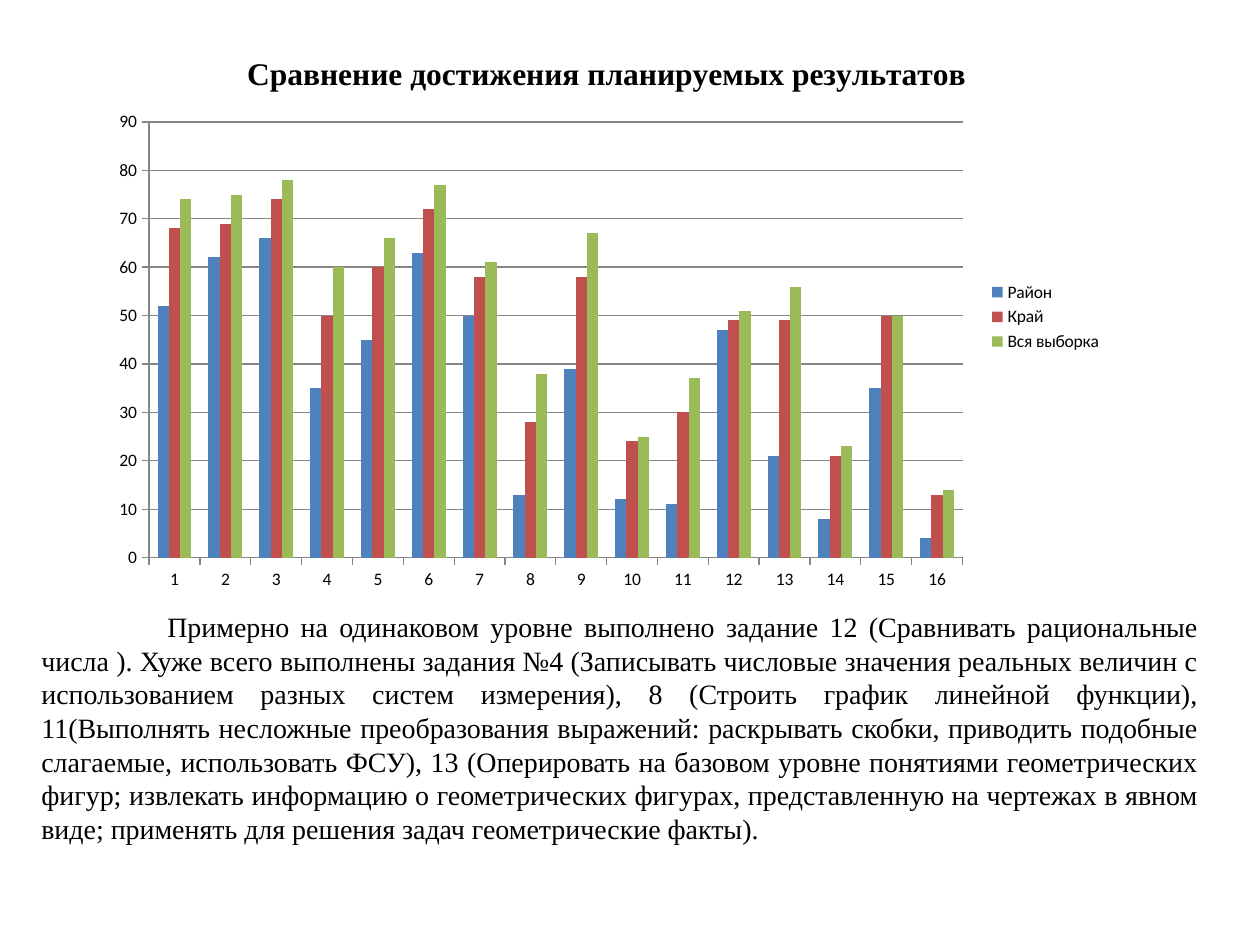
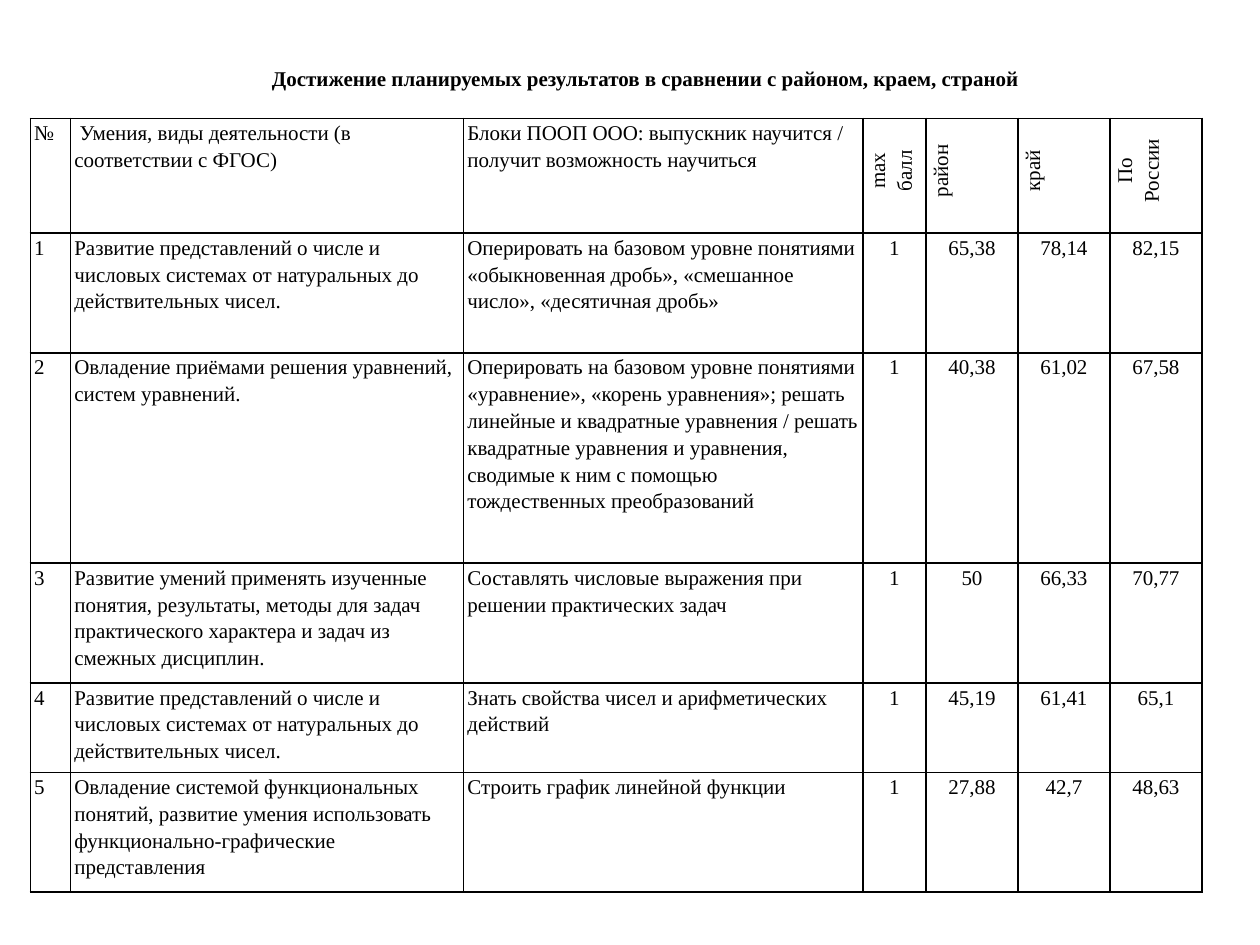
from lxml.etree import SubElement
from pptx import Presentation
from pptx.chart.data import CategoryChartData
from pptx.dml.color import RGBColor
from pptx.enum.chart import XL_CHART_TYPE, XL_LEGEND_POSITION, XL_TICK_MARK
from pptx.enum.text import MSO_ANCHOR, MSO_AUTO_SIZE, PP_ALIGN
from pptx.oxml import parse_xml
from pptx.oxml.ns import nsdecls, qn
from pptx.util import Inches, Pt

BLACK = RGBColor(0x00, 0x00, 0x00)
GRAY = RGBColor(0x86, 0x86, 0x86)
BLUE = RGBColor(0x4F, 0x81, 0xBD)
RED = RGBColor(0xC0, 0x50, 0x4D)
GREEN = RGBColor(0x9B, 0xBB, 0x59)
SERIF = "Times New Roman"
SANS = "Calibri"

SERIES = [
    ("Район", BLUE, (52, 62, 66, 35, 45, 63, 50, 13, 39, 12, 11, 47, 21, 8, 35, 4)),
    ("Край", RED, (68, 69, 74, 50, 60, 72, 58, 28, 58, 24, 30, 49, 49, 21, 50, 13)),
    ("Вся выборка", GREEN, (74, 75, 78, 60, 66, 77, 61, 38, 67, 25, 37, 51, 56, 23, 50, 14)),
]
PLOT_LAYOUT = {"x": 0.05, "y": 0.16, "w": 0.8, "h": 0.76}
CONCLUSION = (
    "Примерно на одинаковом уровне выполнено задание 12 (Сравнивать рациональные числа ). "
    "Хуже всего выполнены задания №4 (Записывать числовые значения реальных величин с "
    "использованием разных систем измерения), 8 (Строить график линейной функции), "
    "11(Выполнять несложные преобразования выражений: раскрывать скобки, приводить подобные "
    "слагаемые, использовать ФСУ), 13 (Оперировать на базовом уровне понятиями геометрических "
    "фигур; извлекать информацию о геометрических фигурах, представленную на чертежах в явном "
    "виде; применять для решения задач геометрические факты)."
)
NUMBER_SYSTEMS = "Развитие представлений о числе и числовых системах от натуральных до действительных чисел."
COLUMN_WIDTHS = (0.32, 3.12, 3.17, 0.5, 0.73, 0.73, 0.73)
ROW_HEIGHTS = (0.91, 0.95, 1.67, 0.95, 0.71, 0.95)
FIRST_SCORE_COLUMN = 3
RESULTS = [
    ("№", " Умения, виды деятельности (в соответствии с ФГОС)",
     "Блоки ПООП ООО: выпускник научится / получит возможность научиться",
     "max\nбалл", "район", "край", "По\nРоссии"),
    ("1", NUMBER_SYSTEMS,
     "Оперировать на базовом уровне понятиями «обыкновенная дробь», «смешанное число», "
     "«десятичная дробь»", "1", "65,38", "78,14", "82,15"),
    ("2", "Овладение приёмами решения уравнений, систем уравнений.",
     "Оперировать на базовом уровне понятиями «уравнение», «корень уравнения»; решать линейные "
     "и квадратные уравнения / решать квадратные уравнения и уравнения, сводимые к ним с помощью "
     "тождественных преобразований", "1", "40,38", "61,02", "67,58"),
    ("3", "Развитие умений применять изученные понятия, результаты, методы для задач "
     "практического характера и задач из смежных дисциплин.",
     "Составлять числовые выражения при решении практических задач", "1", "50", "66,33", "70,77"),
    ("4", NUMBER_SYSTEMS, "Знать свойства чисел и арифметических действий",
     "1", "45,19", "61,41", "65,1"),
    ("5", "Овладение системой функциональных понятий, развитие умения использовать "
     "функционально-графические представления",
     "Строить график линейной функции", "1", "27,88", "42,7", "48,63"),
]


def set_all(target, **values):
    """Set several attributes of one object."""
    for name, value in values.items():
        setattr(target, name, value)


def format_font(font, size, name=SERIF, bold=False):
    """Give a font its face, size, weight and the text colour."""
    set_all(font, name=name, size=Pt(size), bold=bold)
    font.color.rgb = BLACK


def write(para, text, size, bold=False):
    """Add formatted runs to a paragraph, one for each line of the text."""
    for number, line in enumerate(text.split("\n")):
        if number:
            para.add_line_break()
        span = para.add_run()
        span.text = line
        format_font(span.font, size, bold=bold)


def indent(para, left, first):
    """Set the left margin and first-line indent in inches."""
    properties = para._p.get_or_add_pPr()
    properties.set("marL", str(Inches(left)))
    properties.set("indent", str(Inches(first)))


def fix_plot_layout(chart):
    """Place the inner plot area at fractions of the chart."""
    plot_area = chart._chartSpace.chart.plotArea
    for old in plot_area.findall(qn("c:layout")):
        plot_area.remove(old)
    layout = parse_xml(f"<c:layout {nsdecls('c')}/>")
    manual = SubElement(layout, qn("c:manualLayout"))
    settings = {"layoutTarget": "inner", "xMode": "edge", "yMode": "edge", **PLOT_LAYOUT}
    for name, value in settings.items():
        SubElement(manual, qn(f"c:{name}")).set("val", str(value))
    plot_area.insert(0, layout)


def add_comparison_chart(page, box):
    """Draw the clustered columns of the three groups in the box."""
    data = CategoryChartData(number_format="General")
    data.categories = [str(task) for task in range(1, 17)]
    for name, _, values in SERIES:
        data.add_series(name, values)
    chart = page.shapes.add_chart(XL_CHART_TYPE.COLUMN_CLUSTERED, *map(Inches, box), data).chart
    format_font(chart.font, 10, SANS)
    chart.has_title = True
    write(chart.chart_title.text_frame.paragraphs[0],
          "Сравнение достижения планируемых результатов", 18, True)
    chart.chart_title.include_in_layout = False
    chart.has_legend = True
    set_all(chart.legend, position=XL_LEGEND_POSITION.RIGHT, include_in_layout=False)
    set_all(chart.plots[0], gap_width=150, overlap=0, vary_by_categories=False)
    for series, (_, color, _) in zip(chart.plots[0].series, SERIES):
        series.format.fill.solid()
        series.format.fill.fore_color.rgb = color
    set_all(chart.value_axis, minimum_scale=0, maximum_scale=90, major_unit=10,
            has_major_gridlines=True)
    for axis in (chart.category_axis, chart.value_axis):
        axis.major_tick_mark = XL_TICK_MARK.OUTSIDE
        axis.format.line.color.rgb = GRAY
    chart.value_axis.major_gridlines.format.line.color.rgb = GRAY
    fix_plot_layout(chart)


def add_conclusion(page, box):
    """Write the justified paragraph under the chart."""
    frame = page.shapes.add_textbox(*map(Inches, box)).text_frame
    frame.word_wrap = True
    para = frame.paragraphs[0]
    para.alignment = PP_ALIGN.JUSTIFY
    indent(para, 0, 1)
    write(para, CONCLUSION, 16)


def place_title(page, box, text):
    """Move the title placeholder into the box and fill it."""
    title = page.shapes.title
    set_all(title, **dict(zip(("left", "top", "width", "height"), map(Inches, box))))
    frame = title.text_frame
    set_all(frame, word_wrap=False, auto_size=MSO_AUTO_SIZE.NONE, vertical_anchor=MSO_ANCHOR.MIDDLE)
    para = frame.paragraphs[0]
    para.alignment = PP_ALIGN.CENTER
    indent(para, 0, 0.49)
    write(para, text, 12, True)


def add_borders(cell):
    """Draw a thin black line on each side of a cell."""
    properties = cell._tc.get_or_add_tcPr()
    for position, side in enumerate(("lnL", "lnR", "lnT", "lnB")):
        properties.insert(position, parse_xml(
            f'<a:{side} {nsdecls("a")} w="{Pt(1)}"><a:solidFill><a:srgbClr val="{BLACK}"/>'
            f'</a:solidFill></a:{side}>'))


def fill_cell(cell, text, is_score, is_header):
    """Write and format one cell, turning the score headings upright."""
    set_all(cell, margin_left=Inches(0.03), margin_right=Inches(0.03), margin_top=0, margin_bottom=0)
    cell.fill.background()
    add_borders(cell)
    para = cell.text_frame.paragraphs[0]
    para.line_spacing = 1.15
    if is_score:
        para.alignment = PP_ALIGN.CENTER
    if is_score and is_header:
        cell._tc.get_or_add_tcPr().set("vert", "vert270")
        indent(para, 0.08, 0)
    write(para, text, 12)


def add_results_table(page, box):
    """Build the table of skills and scores in the box."""
    table = page.shapes.add_table(len(RESULTS), len(COLUMN_WIDTHS), *map(Inches, box)).table
    set_all(table, first_row=False, horz_banding=False)
    for column, width in zip(table.columns, COLUMN_WIDTHS):
        column.width = Inches(width)
    for row, height, texts in zip(table.rows, ROW_HEIGHTS, RESULTS):
        row.height = Inches(height)
        for number, (cell, text) in enumerate(zip(row.cells, texts)):
            fill_cell(cell, text, number >= FIRST_SCORE_COLUMN, texts is RESULTS[0])


def build_chart_page(deck):
    """Add the page with the chart and its conclusion."""
    page = deck.slides.add_slide(deck.slide_layouts[6])
    add_comparison_chart(page, (0.78, 0.24, 8.07, 4.55))
    add_conclusion(page, (0.23, 4.79, 9.38, 2.02))


def build_table_page(deck):
    """Add the page with the table of results."""
    page = deck.slides.add_slide(deck.slide_layouts[5])
    add_results_table(page, (0.24, 0.94, sum(COLUMN_WIDTHS), sum(ROW_HEIGHTS)))
    place_title(page, (1.48, 0.47, 6.8, 0.3),
                "Достижение планируемых результатов в сравнении с районом, краем, страной")


def main():
    """Build and save the deck."""
    deck = Presentation()
    set_all(deck, slide_width=Inches(10), slide_height=Inches(7.5))
    build_chart_page(deck)
    build_table_page(deck)
    deck.save("out.pptx")


if __name__ == "__main__":
    main()
